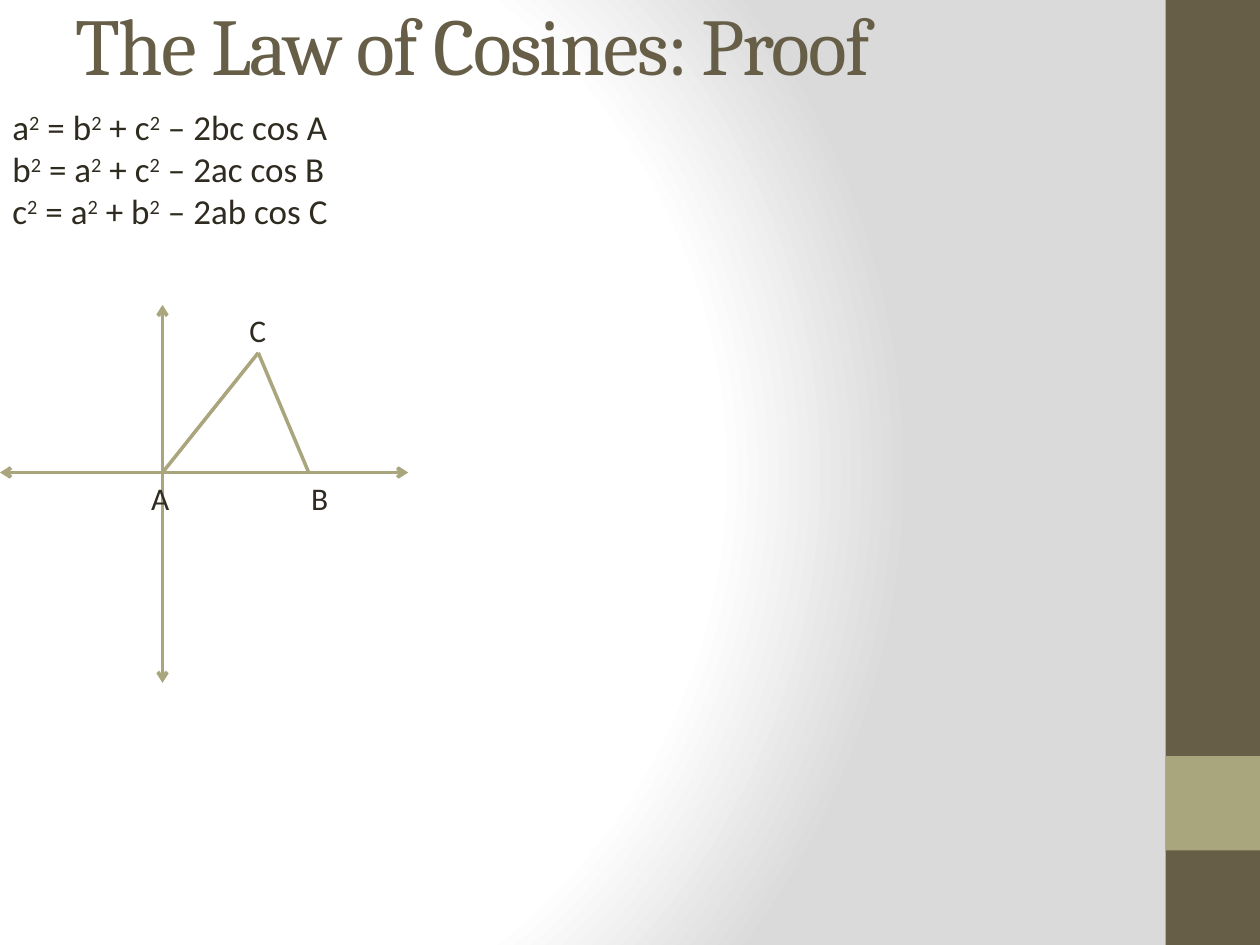
from pptx import Presentation, util as u
from pptx.dml.color import RGBColor
from pptx.enum import shapes, text
from pptx.oxml import parse_xml
from pptx.oxml.ns import nsdecls, qn
from lxml import etree

UNIT = 0.25  # inches per grid column and row: 40 columns, 30 rows
COLUMNS, ROWS = 40, 30
BROWN = RGBColor(0x67, 0x5E, 0x47)
OLIVE = RGBColor(0xA9, 0xA5, 0x7C)
INK = RGBColor(0x2F, 0x2B, 0x20)
WHITE = RGBColor(0xFF, 0xFF, 0xFF)
GREY = RGBColor(0xDA, 0xDA, 0xDA)
HEADING_FONT, BODY_FONT = "Cambria", "Calibri"


def grid(*values):
    return [u.Inches(value * UNIT) for value in values]


class SlideBuilder:
    """Style and current slide; positions are in grid columns and rows."""

    def __init__(self, slide):
        self.slide = slide

    def background(self, stops, focus):
        """Circular gradient; stops are (percent, colour), focus is l, t, r, b in percent."""
        stop_xml = "".join(
            f'<a:gs pos="{share * 1000}"><a:srgbClr val="{colour}"/></a:gs>'
            for share, colour in stops)
        sides = " ".join(f'{side}="{share * 1000}"' for side, share in zip("ltrb", focus))
        self.slide._element.cSld.insert(0, parse_xml(
            f'<p:bg {nsdecls("p", "a")}><p:bgPr><a:gradFill rotWithShape="1">'
            f'<a:gsLst>{stop_xml}</a:gsLst>'
            f'<a:path path="circle"><a:fillToRect {sides}/></a:path>'
            '</a:gradFill><a:effectLst/></p:bgPr></p:bg>'))

    def block(self, left, top, width, height, colour):
        shape = self.slide.shapes.add_shape(
            shapes.MSO_SHAPE.RECTANGLE, *grid(left, top, width, height))
        shape.shadow.inherit = False
        shape.fill.solid()
        shape.fill.fore_color.rgb = colour
        shape.line.fill.background()

    def run(self, paragraph, words, size, colour=INK, font=BODY_FONT):
        run = paragraph.add_run()
        run.text = words
        run.font.size = u.Pt(size)
        run.font.name = font
        run.font.color.rgb = colour
        return run

    def title(self, words, left, top, width, height):
        shape = self.slide.shapes.title
        shape.left, shape.top, shape.width, shape.height = grid(left, top, width, height)
        frame = shape.text_frame
        frame.auto_size = text.MSO_AUTO_SIZE.NONE
        frame.vertical_anchor = text.MSO_ANCHOR.MIDDLE
        paragraph = frame.paragraphs[0]
        paragraph.alignment = text.PP_ALIGN.LEFT
        run = self.run(paragraph, words, 46, BROWN, HEADING_FONT)
        run.font._element.set("spc", "-100")

    def formulas(self, lines, left, top, width, height):
        """One paragraph per line, with each ^2 set as a superscript."""
        frame = self.slide.shapes.add_textbox(*grid(left, top, width, height)).text_frame
        frame.word_wrap = True
        for index, line in enumerate(lines):
            paragraph = frame.add_paragraph() if index else frame.paragraphs[0]
            first, *others = line.split("^2")
            self.run(paragraph, first, 20)
            for part in others:
                square = self.run(paragraph, "2", 20)
                square.font._element.set("baseline", "30000")
                self.run(paragraph, part, 20)

    def label(self, letter, left, top):
        frame = self.slide.shapes.add_textbox(*grid(left, top, 1.4, 1.6)).text_frame
        frame.word_wrap = False
        self.run(frame.paragraphs[0], letter, 18)

    def line(self, start, end, arrows=False):
        connector = self.slide.shapes.add_connector(
            shapes.MSO_CONNECTOR.STRAIGHT, *grid(*start, *end))
        connector.line.color.rgb = OLIVE
        connector.line.width = u.Pt(2)
        if arrows:
            outline = connector.line._get_or_add_ln()
            for tag in ("a:headEnd", "a:tailEnd"):
                etree.SubElement(outline, qn(tag)).set("type", "arrow")
        etree.SubElement(connector._element.spPr, qn("a:effectLst"))


def main():
    presentation = Presentation()
    presentation.slide_width, presentation.slide_height = grid(COLUMNS, ROWS)
    builder = SlideBuilder(presentation.slides.add_slide(presentation.slide_layouts[5]))

    builder.background([(0, WHITE), (75, WHITE), (100, GREY)], (20, 50, 100, 50))
    builder.block(37, 0, 3, ROWS, BROWN)
    builder.block(37, 24, 3, 3, OLIVE)
    builder.title("The Law of Cosines: Proof", 2, 0, 33.32, 2.76)
    builder.formulas(["a^2 = b^2 + c^2 – 2bc cos A",
                      "b^2 = a^2 + c^2 – 2ac cos B",
                      "c^2 = a^2 + b^2 – 2ab cos C"], 0, 3.16, 17.24, 9.96)

    axis_x, axis_y = 5.16, 15
    corner_a, corner_b, corner_c = (axis_x, axis_y), (9.8, axis_y), (8.2, 11.2)
    builder.line((axis_x, 21.68), (axis_x, 9.68), arrows=True)
    builder.line((0, axis_y), (12.96, axis_y), arrows=True)
    builder.line(corner_a, corner_c)
    builder.line(corner_c, corner_b)
    for letter, left, top in (("A", 4.4, axis_y), ("B", 9.48, axis_y), ("C", 7.52, 9.68)):
        builder.label(letter, left, top)

    presentation.save("out.pptx")


if __name__ == "__main__":
    main()
